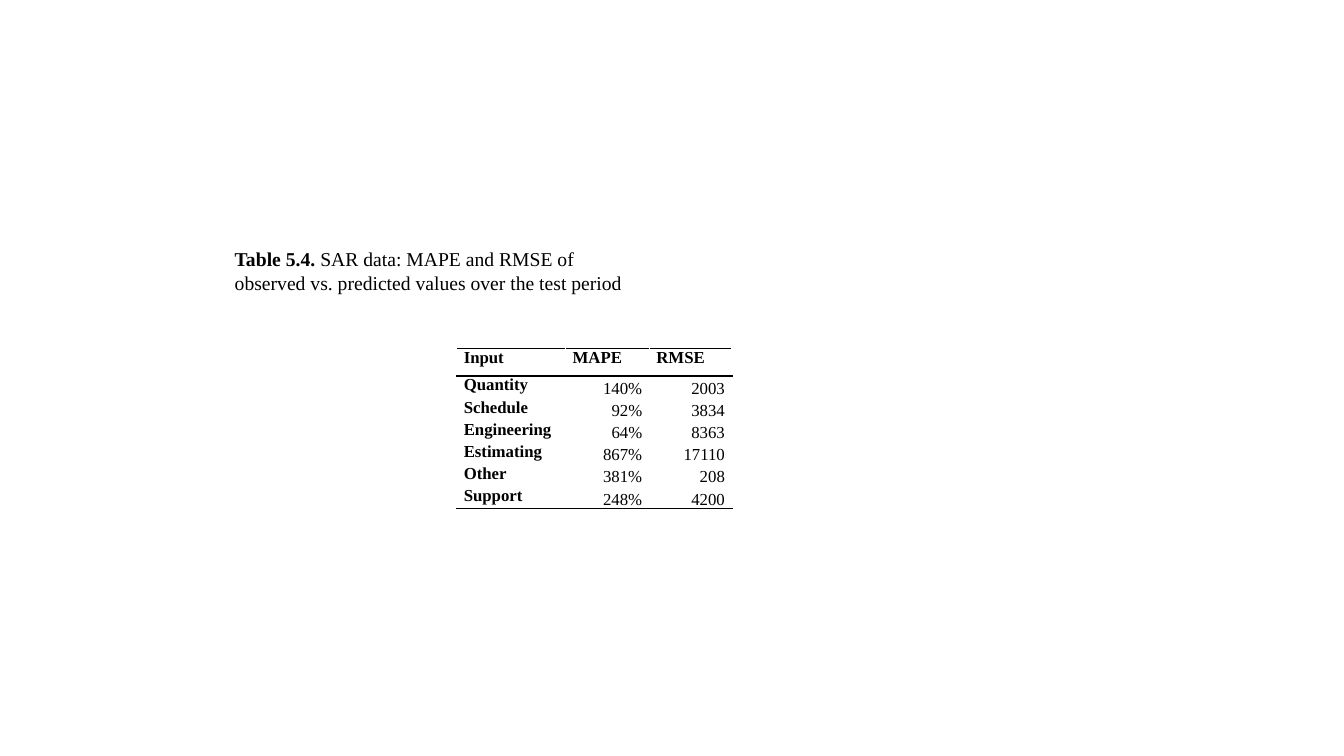
from pptx import Presentation
from pptx.dml.color import RGBColor
from pptx.enum import text
from pptx.oxml import parse_xml
from pptx.oxml.ns import nsdecls
from pptx.util import Inches, Pt

FONT = "Times New Roman"
INK, PAPER = "000000", "FFFFFF"
LABEL = "Table 5.4."
CAPTION = " SAR data: MAPE and RMSE of observed vs. predicted values over the test period"
ROWS = [
    ("Input", "MAPE", "RMSE"),
    ("Quantity", "140%", "2003"),
    ("Schedule", "92%", "3834"),
    ("Engineering", "64%", "8363"),
    ("Estimating", "867%", "17110"),
    ("Other", "381%", "208"),
    ("Support", "248%", "4200"),
]
WIDTHS = (1.08, 0.83, 0.82)
HEAD, BODY = 0.27, 0.22


def style(font, size, bold=None):
    font.name, font.size, font.bold = FONT, Pt(size), bold
    font.color.rgb = RGBColor.from_string(INK)


def edge(cell, sides):
    props = cell._tc.get_or_add_tcPr()
    for spot, (side, color) in enumerate(sides.items()):
        props.insert(spot, parse_xml(
            f'<a:ln{side} {nsdecls("a")} w="12700"><a:solidFill>'
            f'<a:srgbClr val="{color}"/></a:solidFill></a:ln{side}>'))


def fill_cell(cell, value, row, col):
    number = row > 0 and col > 0
    cell.fill.background()
    cell.margin_left = cell.margin_right = Inches(0.07)
    cell.margin_top = cell.margin_bottom = 0
    cell.vertical_anchor = text.MSO_ANCHOR.BOTTOM if number else text.MSO_ANCHOR.TOP
    cell.text = value
    para = cell.text_frame.paragraphs[0]
    para.space_before = para.space_after = Pt(3)
    para.alignment = text.PP_ALIGN.RIGHT if number else text.PP_ALIGN.LEFT
    style(para.font, 12, not number)
    edge(cell, {
        "L": PAPER,
        "R": PAPER,
        "T": INK if row < 2 else PAPER,
        "B": INK if row in (0, len(ROWS) - 1) else PAPER,
    })


def add_grid(slide):
    high = HEAD + BODY * (len(ROWS) - 1)
    frame = slide.shapes.add_table(
        len(ROWS), len(WIDTHS), Inches(4.53), Inches(3.46),
        Inches(sum(WIDTHS)), Inches(high))
    grid = frame.table
    grid.horz_banding = False
    for col, width in zip(grid.columns, WIDTHS):
        col.width = Inches(width)
    for row, values in enumerate(ROWS):
        grid.rows[row].height = Inches(BODY if row else HEAD)
        for col, value in enumerate(values):
            fill_cell(grid.cell(row, col), value, row, col)


def add_caption(slide):
    box = slide.shapes.add_textbox(Inches(2.23), Inches(2.4), Inches(4.2), Inches(0.57))
    frame = box.text_frame
    frame.word_wrap = True
    frame.vertical_anchor = text.MSO_ANCHOR.MIDDLE
    para = frame.paragraphs[0]
    style(para.font, 14)
    for words, bold in ((LABEL, True), (CAPTION, False)):
        run = para.add_run()
        run.text, run.font.bold = words, bold


def main():
    deck = Presentation()
    deck.slide_width, deck.slide_height = Inches(13.33), Inches(7.5)
    slide = deck.slides.add_slide(deck.slide_layouts[6])
    add_grid(slide)
    add_caption(slide)
    deck.save("out.pptx")


if __name__ == "__main__":
    main()
